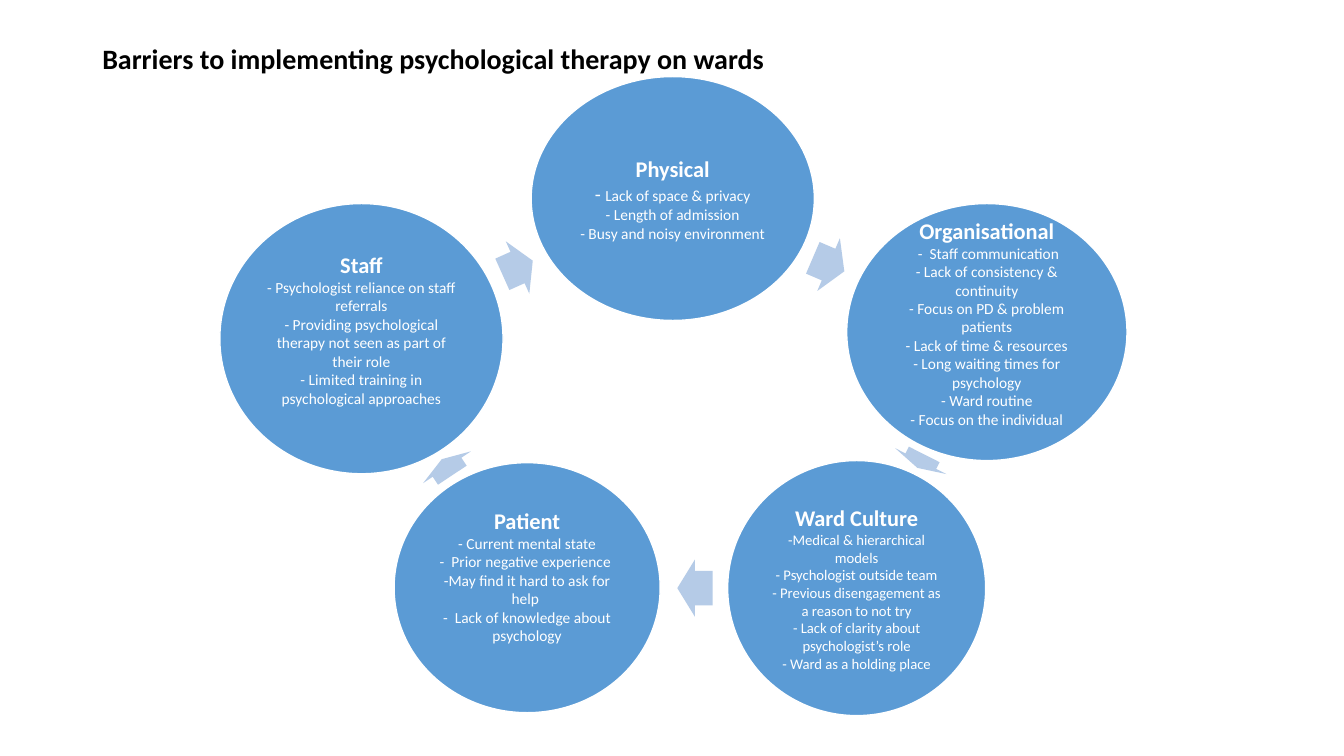
"""Build a slide with a ring of five barriers to psychological therapy on wards."""
from pptx import Presentation
from pptx.dml.color import RGBColor
from pptx.enum.shapes import MSO_SHAPE
from pptx.enum.text import MSO_ANCHOR, PP_ALIGN
from pptx.util import Pt

OVAL, ARROW = MSO_SHAPE.OVAL, MSO_SHAPE.RIGHT_ARROW
TOP, MIDDLE = MSO_ANCHOR.TOP, MSO_ANCHOR.MIDDLE
LEFT, CENTER = PP_ALIGN.LEFT, PP_ALIGN.CENTER

COLORS = {"title": "000000", "oval": "5B9BD5", "arrow": "B5CBE7", "white": "FFFFFF"}
FONT = "Calibri"
INSET = 1.4
ARROW_HEIGHT = 41

TITLE = "Barriers to implementing psychological therapy on wards"
BARRIERS = [
    {"name": "Physical", "frame": (379.4, 54.7, 202.3, 174.2), "size": 11, "room_below": 0,
     "points": [[("- ", 14), ("Lack of space & privacy", 11)],
                "- Length of admission", "- Busy and noisy environment"],
     "arrow": (579.6, 168.5, 24.5), "turn": 23.2},
    {"name": "Organisational", "frame": (604.8, 145.4, 200.2, 183.6), "size": 11, "room_below": 13.4,
     "points": [" -  Staff communication", "- Lack of consistency & continuity",
                "- Focus on PD & problem patients", "- Lack of time & resources",
                "- Long waiting times for psychology", "- Ward routine",
                "- Focus on the individual"],
     "arrow": (652.3, 308.9, 10.8), "turn": 116.8},
    {"name": "Ward Culture", "frame": (519.8, 329, 184.3, 182.2), "size": 10.5, "room_below": 0,
     "points": ["-Medical & hierarchical models", "- Psychologist outside team",
                "- Previous disengagement as a reason to not try",
                "- Lack of clarity about psychologist’s role", "- Ward as a holding place"],
     "arrow": (483.8, 399.6, 25.2), "turn": 180},
    {"name": "Patient", "frame": (281.5, 330.5, 190.1, 178.6), "size": 11, "room_below": 17.1,
     "points": ["- Current mental state", "-  Prior negative experience ",
                "-May find it hard to ask for help ", "-  Lack of knowledge about psychology"],
     "arrow": (312.5, 313.2, 13.7), "turn": 236.4},
    {"name": "Staff", "frame": (157, 145.4, 202.3, 193), "size": 11, "room_below": 13.4,
     "points": ["- Psychologist reliance on staff referrals",
                "- Providing psychological therapy not seen as part of their role",
                "- Limited training in psychological approaches"],
     "arrow": (357.8, 170.6, 23.8), "turn": 335.8},
]


def write(para, text, size, color="white", bold=False, align=CENTER):
    """Write a string, or a list of (string, size) spans, into a paragraph."""
    para.alignment = align
    spans = [(text, size)] if isinstance(text, str) else text
    for words, points in spans:
        span = para.add_run()
        span.text = words
        span.font.name = FONT
        span.font.size = Pt(points)
        span.font.bold = bold
        span.font.color.rgb = RGBColor.from_string(COLORS[color])


def set_frame(frame, anchor, left, top, right, bottom):
    """Set wrapping, anchor and insets of a text frame."""
    frame.word_wrap = True
    frame.vertical_anchor = anchor
    frame.margin_left, frame.margin_top = Pt(left), Pt(top)
    frame.margin_right, frame.margin_bottom = Pt(right), Pt(bottom)


def add_filled(page, kind, frame, color):
    """Add a flat preset shape without an outline."""
    shape = page.shapes.add_shape(kind, *map(Pt, frame))
    shape.shadow.inherit = False
    shape.fill.solid()
    shape.fill.fore_color.rgb = RGBColor.from_string(COLORS[color])
    shape.line.fill.background()
    return shape


def add_barrier(page, barrier):
    """Add one oval with its heading and points, and the arrow that leaves it."""
    oval = add_filled(page, OVAL, barrier["frame"], "oval")
    oval.line.color.rgb = RGBColor.from_string(COLORS["white"])
    oval.line.width = Pt(1)
    frame = oval.text_frame
    set_frame(frame, MIDDLE, INSET, INSET, INSET, INSET + barrier["room_below"])
    write(frame.paragraphs[0], barrier["name"], 16, bold=True)
    for point in barrier["points"]:
        write(frame.add_paragraph(), point, barrier["size"])

    arrow = add_filled(page, ARROW, (*barrier["arrow"], ARROW_HEIGHT), "arrow")
    arrow.adjustments[0], arrow.adjustments[1] = 0.6, 0.5
    arrow.rotation = barrier["turn"]


def main():
    """Build and save the deck."""
    deck = Presentation()
    deck.slide_width, deck.slide_height = Pt(960), Pt(540)
    page = deck.slides.add_slide(deck.slide_layouts[6])

    title = page.shapes.add_textbox(Pt(66), Pt(28.8), Pt(828), Pt(104.4)).text_frame
    set_frame(title, TOP, 7.2, 3.6, 7.2, 3.6)
    write(title.paragraphs[0], TITLE, 20, color="title", bold=True, align=LEFT)
    title.paragraphs[0].line_spacing = 0.9

    for barrier in BARRIERS:
        add_barrier(page, barrier)
    deck.save("out.pptx")


if __name__ == "__main__":
    main()
